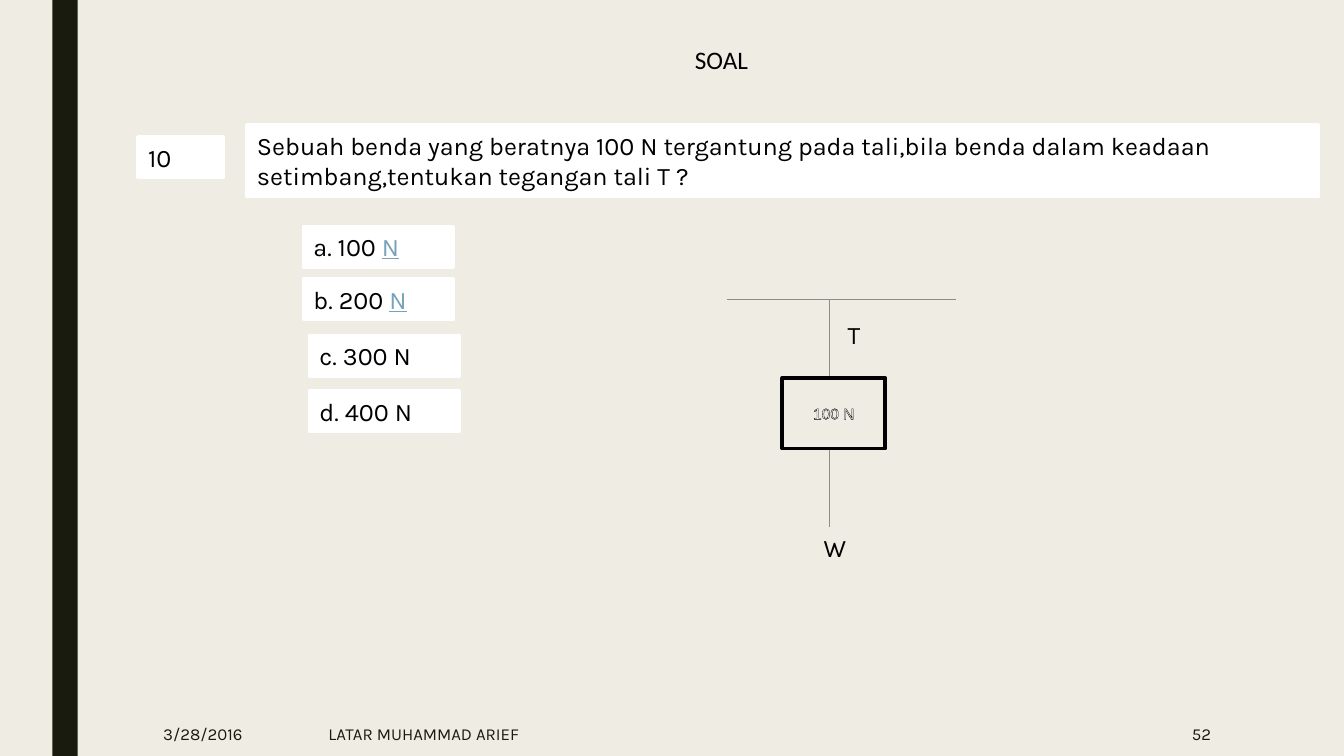
from lxml import etree
from pptx import Presentation
from pptx.dml.color import RGBColor
from pptx.enum.shapes import MSO_CONNECTOR, MSO_SHAPE
from pptx.enum.text import MSO_ANCHOR as ANCHOR, PP_ALIGN as ALIGN
from pptx.oxml import parse_xml
from pptx.oxml.ns import nsdecls, qn
from pptx.util import Inches, Pt


def color(value):
    return RGBColor.from_string(value)


def write(shape, text, size=18, font="Karla", ink="000000", align=ALIGN.LEFT, anchor=ANCHOR.TOP):
    frame = shape.text_frame
    frame.word_wrap = True
    frame.vertical_anchor = anchor
    paragraph = frame.paragraphs[0]
    paragraph.alignment = align
    paragraph.font.size = Pt(size)
    paragraph.font.name = font
    paragraph.font.color.rgb = color(ink)
    run = paragraph.add_run()
    run.text = text
    return run


presentation = Presentation()
presentation.slide_width = Inches(13.33)
presentation.slide_height = Inches(7.5)
slide = presentation.slides.add_slide(presentation.slide_layouts[6])
slide.background.fill.solid()
slide.background.fill.fore_color.rgb = color("EFEDE3")
shapes = slide.shapes

side_bar = shapes.add_shape(MSO_SHAPE.RECTANGLE, Inches(0.52), 0, Inches(0.25), Inches(7.5))
side_bar.shadow.inherit = False
side_bar.fill.solid()
side_bar.fill.fore_color.rgb = color("191B0E")
side_bar.line.fill.background()

question = (
    "Sebuah benda yang beratnya 100 N tergantung pada tali,bila benda dalam keadaan "
    "setimbang,tentukan tegangan tali T ?"
)
white_boxes = [
    (1.37, 1.36, 0.84, 0.4, "10", ""),
    (2.45, 1.24, 10.62, 0.71, question, ""),
    (3.01, 2.25, 1.48, 0.4, "a. 100 ", "N"),
    (3.01, 2.77, 1.48, 0.4, "b. 200 ", "N"),
    (3.07, 3.33, 1.48, 0.4, "c. 300 N", ""),
    (3.07, 3.88, 1.48, 0.4, "d. 400 N", ""),
]
for left, top, width, height, text, underlined in white_boxes:
    box = shapes.add_shape(
        MSO_SHAPE.RECTANGLE, Inches(left), Inches(top), Inches(width), Inches(height)
    )
    box.shadow.inherit = False
    box.fill.solid()
    box.fill.fore_color.rgb = color("FFFFFF")
    box.line.color.rgb = color("FFFFFF")
    box.line.width = Pt(2.75)
    write(box, text)
    if underlined:
        unit = box.text_frame.paragraphs[0].add_run()
        unit.text = underlined
        unit.font.underline = True
        unit.font.color.rgb = color("77A2BB")

ceiling_and_ropes = [
    (7.21, 2.97, 9.48, 2.97),
    (8.23, 2.97, 8.23, 3.75),
    (8.23, 4.45, 8.23, 5.23),
]
for start_x, start_y, end_x, end_y in ceiling_and_ropes:
    rope = shapes.add_connector(
        MSO_CONNECTOR.STRAIGHT, Inches(start_x), Inches(start_y), Inches(end_x), Inches(end_y)
    )
    rope.line.color.rgb = color("8C8D86")
    rope.line.width = Pt(0.5)
    etree.SubElement(rope._element.spPr, qn("a:effectLst"))

weight = shapes.add_shape(
    MSO_SHAPE.RECTANGLE, Inches(7.76), Inches(3.75), Inches(1.02), Inches(0.7)
)
weight.shadow.inherit = False
weight.fill.background()
weight.line.color.rgb = color("000000")
weight.line.width = Pt(2.75)
weight_label = write(weight, "100 N", 11, "Arial", "FFFFFF", ALIGN.CENTER, ANCHOR.MIDDLE)
text_outline = parse_xml(
    f'<a:ln {nsdecls("a")} w="9525"><a:solidFill><a:srgbClr val="000000"/></a:solidFill></a:ln>'
)
weight_label.font._element.insert(0, text_outline)

labels = [
    (8.31, 3.12, 0.47, "T", "Karla", ALIGN.LEFT),
    (8.07, 5.23, 0.78, "W", "Karla", ALIGN.LEFT),
    (6.67, 0.39, 0.97, "SOAL", "Calibri", ALIGN.CENTER),
]
for left, top, width, text, font, align in labels:
    label = shapes.add_textbox(Inches(left), Inches(top), Inches(width), Inches(0.4))
    write(label, text, font=font, align=align)

footers = [
    (1.52, 1.32, "3/28/2016", ALIGN.LEFT),
    (3.16, 6.87, "LATAR MUHAMMAD ARIEF", ALIGN.LEFT),
    (10.36, 1.75, "52", ALIGN.RIGHT),
]
for left, width, text, align in footers:
    footer = shapes.add_textbox(Inches(left), Inches(7.06), Inches(width), Inches(0.44))
    write(footer, text, 12, ink="191B0E", align=align, anchor=ANCHOR.MIDDLE)

presentation.save("out.pptx")
